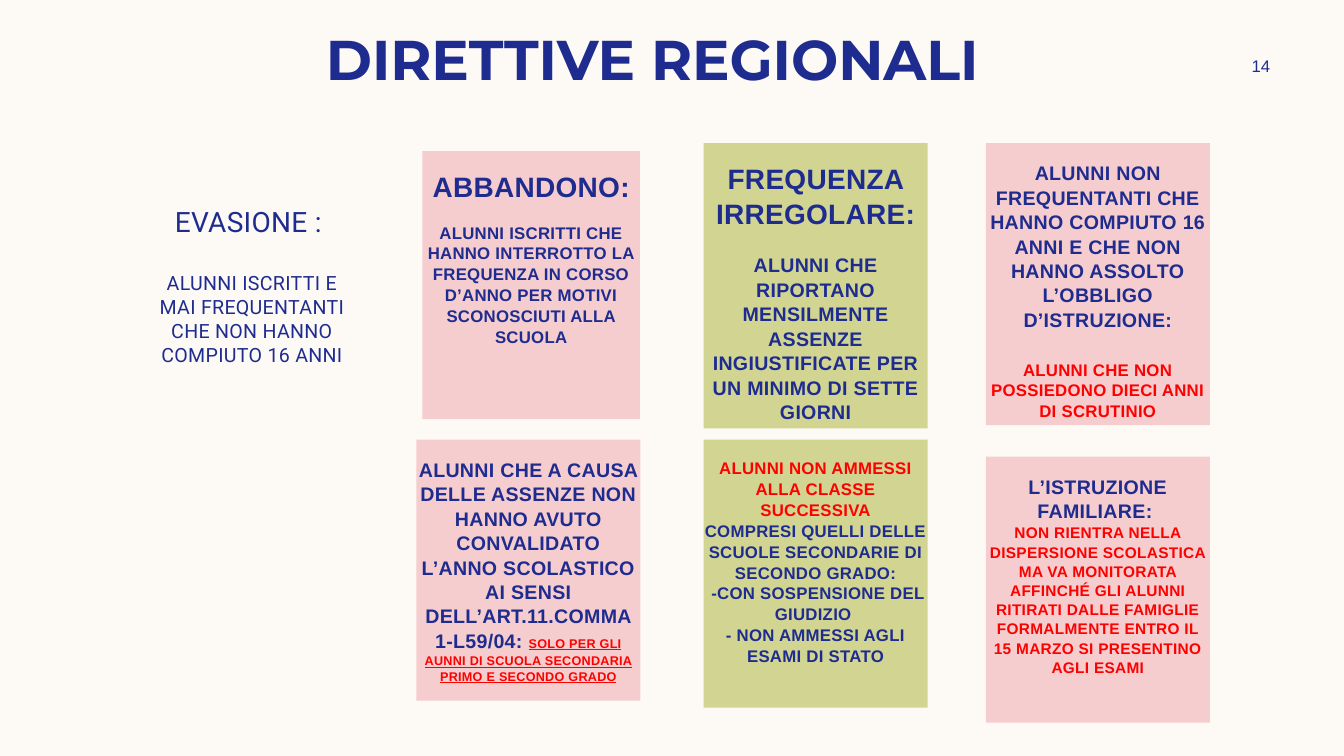
import pptx
import pptx.util
import pptx.dml.color
import pptx.enum.shapes
import pptx.enum.text

Pt = pptx.util.Pt
NAVY, RED, PINK, OLIVE, CREAM = "1F2C8F", "FF0000", "F5CDCE", "D2D592", "FDFAF6"


def tint(code):
    """Turn a hex string into a colour."""
    return pptx.dml.color.RGBColor.from_string(code)


class Deck:
    """Hold the text style and the current slide."""

    def __init__(self):
        """Start a deck with one blank slide."""
        self.show = pptx.Presentation()
        self.show.slide_width, self.show.slide_height = Pt(960), Pt(540)
        self.slide = self.show.slides.add_slide(self.show.slide_layouts[6])
        back = self.slide.background.fill
        back.solid()
        back.fore_color.rgb = tint(CREAM)

    def style(self, run, size, color=NAVY, font="Arial", bold=False, track=20):
        """Set the look of a run."""
        run.font.size, run.font.name, run.font.bold = Pt(size), font, bold
        run.font.color.rgb = tint(color)
        if track:
            run._r.get_or_add_rPr().set("spc", str(track))

    def put(self, frame, rows, lead, **look):
        """Fill a frame with rows of text, size, colour and space before."""
        frame.word_wrap = True
        frame.text = "\n".join(row[0] for row in rows)
        for para, (text, size, color, gap) in zip(frame.paragraphs, rows):
            para.alignment = pptx.enum.text.PP_ALIGN.CENTER
            para.line_spacing, para.space_before = lead, Pt(gap)
            self.style(para.runs[0], size, color, **look)

    def label(self, box, rows, lead=1.0, **look):
        """Add a text box with its text in the middle."""
        frame = self.slide.shapes.add_textbox(*map(Pt, box)).text_frame
        frame.vertical_anchor = pptx.enum.text.MSO_ANCHOR.MIDDLE
        self.put(frame, rows, lead, **look)

    def card(self, box, fill, rows):
        """Add a filled card with bold text from the top."""
        kind = pptx.enum.shapes.MSO_SHAPE.RECTANGLE
        shape = self.slide.shapes.add_shape(kind, *map(Pt, box))
        shape.shadow.inherit = False
        shape.fill.solid()
        shape.fill.fore_color.rgb = tint(fill)
        shape.line.fill.background()
        frame = shape.text_frame
        frame.margin_left = frame.margin_right = 0
        frame.margin_top, frame.margin_bottom = Pt(12.24), Pt(3.6)
        frame.vertical_anchor = pptx.enum.text.MSO_ANCHOR.TOP
        self.put(frame, rows, 1.04, bold=True)
        return frame

    def note(self, frame, text, size, color):
        """Add an underlined run to the last paragraph."""
        run = frame.paragraphs[-1].add_run()
        run.text = text
        self.style(run, size, color, bold=True)
        run.font.underline = True


def main():
    """Build the slide and save it."""
    deck = Deck()
    wide, mid, right = 160, 502.6, 704.2

    deck.label((157, 19.4, 617.8, 50.4), [("DIRETTIVE REGIONALI", 40, NAVY, 0)],
               0.9, font="Montserrat", bold=True, track=0)
    deck.label((861.8, 36, 77.8, 21.6), [("14", 12, NAVY, 0)], track=0)
    deck.label((100, 108, wide, 191.5), [
        ("EVASIONE : ", 20, NAVY, 3.6),
        ("ALUNNI ISCRITTI E MAI FREQUENTANTI CHE NON HANNO COMPIUTO 16 ANNI",
         14, NAVY, 23.6)], 1.02, font="Roboto")

    deck.card((301.7, 108, 155.5, 191.5), PINK, [
        ("ABBANDONO:", 20, NAVY, 0),
        ("ALUNNI ISCRITTI CHE HANNO INTERROTTO LA FREQUENZA IN CORSO D’ANNO "
         "PER MOTIVI SCONOSCIUTI ALLA SCUOLA", 12, NAVY, 13)])
    deck.card((mid, 102.2, wide, 203.8), OLIVE, [
        ("FREQUENZA IRREGOLARE:", 20, NAVY, 0),
        ("ALUNNI CHE RIPORTANO MENSILMENTE ASSENZE INGIUSTIFICATE PER "
         "UN MINIMO DI SETTE GIORNI", 14, NAVY, 16)])
    deck.card((right, 102.2, wide, 201.6), PINK, [
        ("ALUNNI NON FREQUENTANTI CHE HANNO COMPIUTO 16 ANNI E CHE NON HANNO "
         "ASSOLTO L’OBBLIGO D’ISTRUZIONE:", 14, NAVY, 0),
        ("ALUNNI CHE NON POSSIEDONO DIECI ANNI DI SCRUTINIO", 12, RED, 19.4)])

    cause = deck.card((297.4, 314, wide, 186.5), PINK, [
        ("ALUNNI CHE A CAUSA DELLE ASSENZE NON HANNO AVUTO CONVALIDATO L’ANNO "
         "SCOLASTICO AI SENSI DELL’ART.11.COMMA 1-L59/04: ", 14, NAVY, 0)])
    deck.note(cause, "SOLO PER GLI AUNNI DI SCUOLA SECONDARIA PRIMO E SECONDO GRADO",
              9, RED)
    deck.card((mid, 314, wide, 191.5), OLIVE, [
        ("ALUNNI NON AMMESSI ALLA CLASSE SUCCESSIVA", 12, RED, 0),
        ("COMPRESI QUELLI DELLE SCUOLE SECONDARIE DI SECONDO GRADO:", 12, NAVY, 0),
        (" -CON SOSPENSIONE DEL GIUDIZIO ", 12, NAVY, 0),
        ("- NON AMMESSI AGLI ESAMI DI STATO", 12, NAVY, 0)])
    deck.card((right, 326.2, wide, 190), PINK, [
        ("L’ISTRUZIONE FAMILIARE: ", 14, NAVY, 0),
        ("NON RIENTRA NELLA DISPERSIONE SCOLASTICA MA VA MONITORATA AFFINCHÉ "
         "GLI ALUNNI RITIRATI DALLE FAMIGLIE FORMALMENTE ENTRO IL 15 MARZO "
         "SI PRESENTINO AGLI ESAMI", 11, RED, 0)])

    deck.show.save("out.pptx")


if __name__ == "__main__":
    main()
